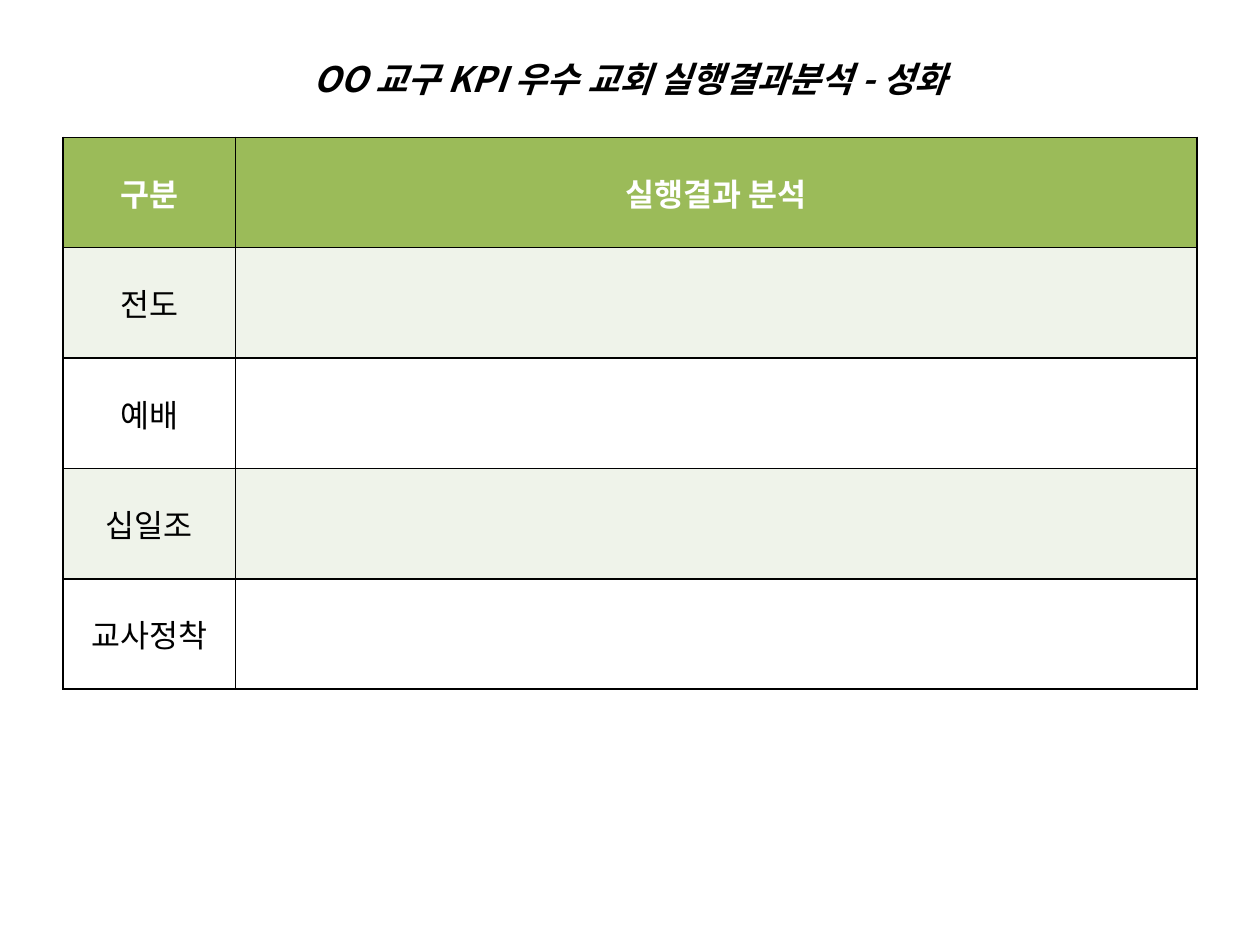
import pptx
import pptx.dml.color
import pptx.enum.text
import pptx.oxml.ns
import pptx.util
from dataclasses import dataclass
from lxml import etree

Inches, Pt = pptx.util.Inches, pptx.util.Pt
qn = pptx.oxml.ns.qn


@dataclass(frozen=True)
class Theme:
    font: str = "Noto Sans CJK KR"
    title_size: int = 20
    table_size: int = 18
    border_width: int = 1
    ink: str = "000000"
    header_text: str = "FFFFFF"
    header_fill: str = "9BBB59"
    band_fill: str = "EFF3EA"
    plain_fill: str = "FFFFFF"


theme = Theme()


def write(frame, text, color, **font_format):
    """Put one centred line in a text frame, with the font set for Hangul too."""
    frame.vertical_anchor = pptx.enum.text.MSO_ANCHOR.MIDDLE
    paragraph = frame.paragraphs[0]
    paragraph.alignment = pptx.enum.text.PP_ALIGN.CENTER
    run = paragraph.add_run()
    run.text = text
    for name, value in font_format.items():
        setattr(run.font, name, value)
    run.font.name = theme.font
    run.font.color.rgb = pptx.dml.color.RGBColor.from_string(color)
    run.font._element.find(qn("a:latin")).addnext(
        etree.Element(qn("a:ea"), typeface=theme.font))


def add_borders(cell):
    properties = cell._tc.get_or_add_tcPr()
    for side in ("lnL", "lnR", "lnT", "lnB"):
        line = etree.SubElement(properties, qn(f"a:{side}"),
                                w=str(Pt(theme.border_width)))
        solid = etree.SubElement(line, qn("a:solidFill"))
        etree.SubElement(solid, qn("a:srgbClr"), val=theme.ink)


deck = pptx.Presentation()
deck.slide_width, deck.slide_height = Inches(10), Inches(7.5)
slide = deck.slides.add_slide(deck.slide_layouts[5])

title = slide.shapes.title
title.left, title.top = Inches(0.5), Inches(0.31)
title.width, title.height = Inches(9), Inches(0.63)
write(title.text_frame, "OO 교구 KPI 우수 교회 실행결과분석 - 성화", theme.ink,
      size=Pt(theme.title_size), bold=True, italic=True)

rows = [("구분", "실행결과 분석"), ("전도", ""), ("예배", ""),
        ("십일조", ""), ("교사정착", "")]
results = slide.shapes.add_table(len(rows), 2, Inches(0.5), Inches(1.09),
                                 Inches(9), Inches(4.38)).table
for column, width in zip(results.columns, (1.37, 7.63)):
    column.width = Inches(width)

for row_index, labels in enumerate(rows):
    is_header = row_index == 0
    if is_header:
        fill = theme.header_fill
    else:
        fill = theme.band_fill if row_index % 2 else theme.plain_fill
    for column_index, label in enumerate(labels):
        cell = results.cell(row_index, column_index)
        add_borders(cell)
        cell.fill.solid()
        cell.fill.fore_color.rgb = pptx.dml.color.RGBColor.from_string(fill)
        cell.vertical_anchor = pptx.enum.text.MSO_ANCHOR.MIDDLE
        if label:
            write(cell.text_frame, label,
                  theme.header_text if is_header else theme.ink,
                  size=Pt(theme.table_size), bold=is_header)

deck.save("out.pptx")
